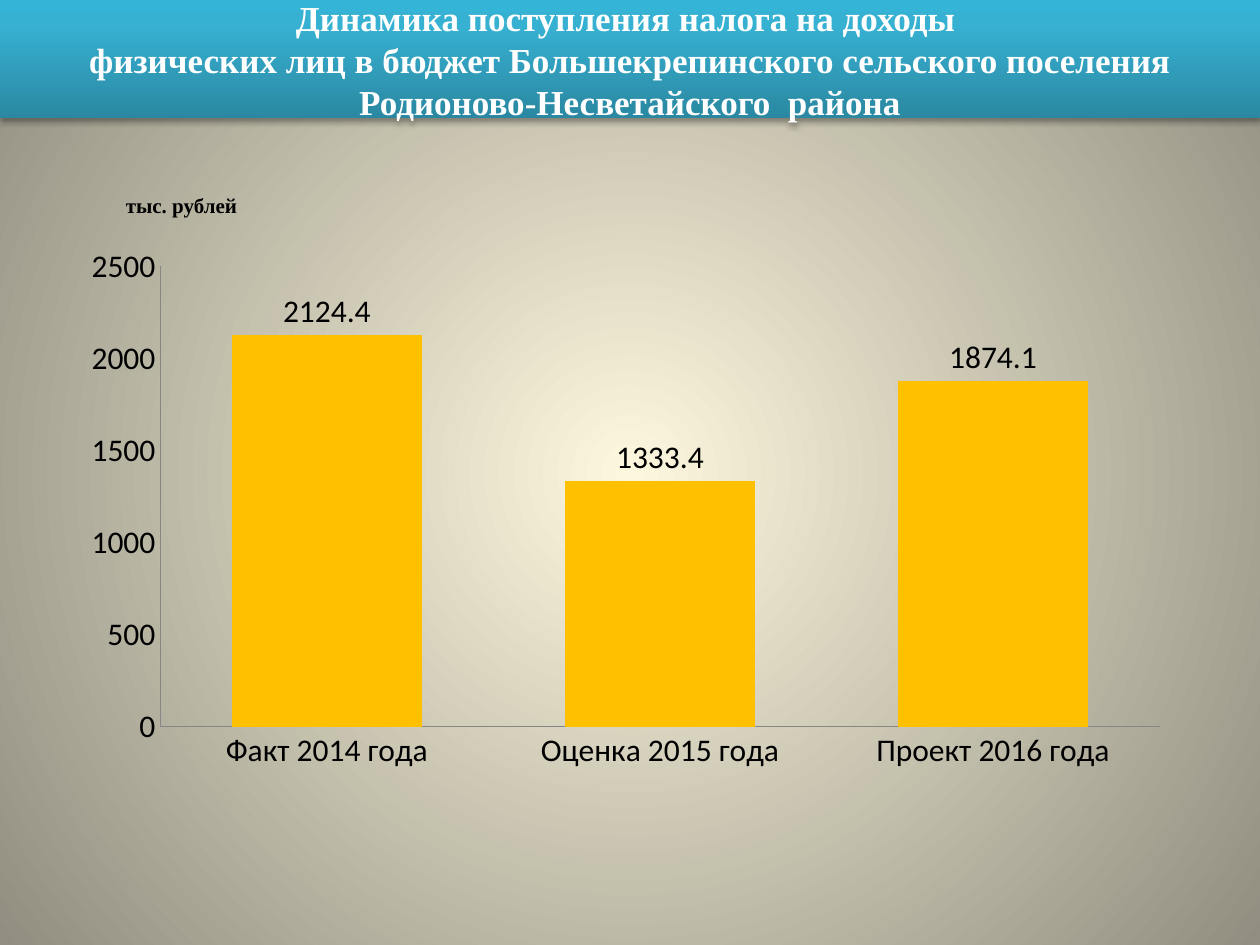
from lxml.etree import SubElement as Sub
from pptx import Presentation
from pptx.chart.data import CategoryChartData as Data
from pptx.dml.color import RGBColor as Rgb
from pptx.enum.chart import XL_CHART_TYPE as Kind, XL_LABEL_POSITION as Spot, XL_TICK_MARK as Tick
from pptx.enum.text import MSO_ANCHOR as Anchor, MSO_AUTO_SIZE as Fit, PP_ALIGN as Align
from pptx.oxml import parse_xml
from pptx.oxml.ns import nsdecls, qn
from pptx.util import Inches, Pt

# Content
TITLE = [
    "Динамика поступления налога на доходы ",
    "физических лиц в бюджет Большекрепинского сельского поселения "
    "Родионово-Несветайского  района",
]
UNIT = ["тыс. рублей"]
BARS = {"Факт 2014 года": 2124.4, "Оценка 2015 года": 1333.4, "Проект 2016 года": 1874.1}

# Look
HUE = {"white": "FFFFFF", "black": "000000", "bar": "FFC000", "axis": "868686"}
GLOW = [(0, "FCF7DD"), (100, "918E81")]
BAND = [(0, "2A88A2"), (80, "37B1D2"), (100, "34B4D6")]
SERIF = {"name": "Times New Roman", "bold": True}
WIDE, HIGH = 10, 7.5

# Shares of the slide: left, top, width, height
SPOTS = {
    "band": (0, 0, 1, 0.125),
    "chart": (0.055, 0.25, 0.883, 0.576),
    "unit": (0.07, 0.197, 0.148, 0.04),
}


def place(key):
    sizes = (WIDE, HIGH, WIDE, HIGH)
    return [Inches(part * size) for part, size in zip(SPOTS[key], sizes)]


def style(font, hue, **looks):
    for name, value in looks.items():
        setattr(font, name, value)
    font.color.rgb = Rgb.from_string(HUE[hue])


def write(frame, lines, hue, **looks):
    for i, line in enumerate(lines):
        para = frame.paragraphs[0] if i == 0 else frame.add_paragraph()
        para.alignment = Align.CENTER
        run = para.add_run()
        run.text = line
        style(run.font, hue, **looks)


def blend(fill, root, stops, shade):
    """Swap a solid fill for a gradient with any number of stops."""
    fill.solid()
    marks = "".join(f'<a:gs pos="{pos * 1000}"><a:srgbClr val="{hue}"/></a:gs>'
                    for pos, hue in stops)
    grad = parse_xml(f'<a:gradFill {nsdecls("a")} rotWithShape="1">'
                     f"<a:gsLst>{marks}</a:gsLst>{shade}</a:gradFill>")
    solid = root.find(qn("a:solidFill"))
    root.replace(solid, grad)


deck = Presentation()
deck.slide_width, deck.slide_height = Inches(WIDE), Inches(HIGH)
slide = deck.slides.add_slide(deck.slide_layouts[5])

# Background glow
fill = slide.background.fill
fill.solid()
blend(fill, slide.element.find(".//" + qn("p:bgPr")), GLOW,
      '<a:path path="circle"><a:fillToRect l="50000" t="50000" r="50000" b="50000"/></a:path>')

# Title band with a soft shadow
band = slide.shapes.title
band.left, band.top, band.width, band.height = place("band")
blend(band.fill, band.element.spPr, BAND, '<a:lin ang="16200000" scaled="0"/>')
band.shadow.inherit = False
glow = Sub(band.element.spPr.find(qn("a:effectLst")), qn("a:outerShdw"),
           blurRad=str(Pt(3.1)), dist=str(Pt(1.8)), dir="5400000", rotWithShape="0")
tone = Sub(glow, qn("a:srgbClr"), val=HUE["black"])
Sub(tone, qn("a:alpha"), val="35000")
frame = band.text_frame
frame.auto_size, frame.word_wrap = Fit.NONE, True
frame.vertical_anchor = Anchor.MIDDLE
write(frame, TITLE, "white", size=Pt(20), **SERIF)

# Column chart
data = Data()
data.categories = list(BARS)
data.add_series("Series 1", list(BARS.values()))
chart = slide.shapes.add_chart(Kind.COLUMN_CLUSTERED, *place("chart"), data).chart
chart.has_legend = chart.has_title = False
style(chart.font, "black", name="Calibri", size=Pt(18))
for axis in (chart.category_axis, chart.value_axis):
    axis.has_major_gridlines = False
    axis.major_tick_mark = axis.minor_tick_mark = Tick.NONE
    axis.format.line.color.rgb = Rgb.from_string(HUE["axis"])
chart.value_axis.minimum_scale = 0
chart.value_axis.maximum_scale = 2500
chart.value_axis.major_unit = 500
plot = chart.plots[0]
plot.gap_width, plot.vary_by_categories = 75, False
bars = plot.series[0].format.fill
bars.solid()
bars.fore_color.rgb = Rgb.from_string(HUE["bar"])
plot.has_data_labels = True
plot.data_labels.show_value = True
plot.data_labels.position = Spot.OUTSIDE_END

# Unit of measure
frame = slide.shapes.add_textbox(*place("unit")).text_frame
frame.word_wrap, frame.auto_size = True, Fit.SHAPE_TO_FIT_TEXT
write(frame, UNIT, "black", size=Pt(12), **SERIF)

deck.save("out.pptx")
